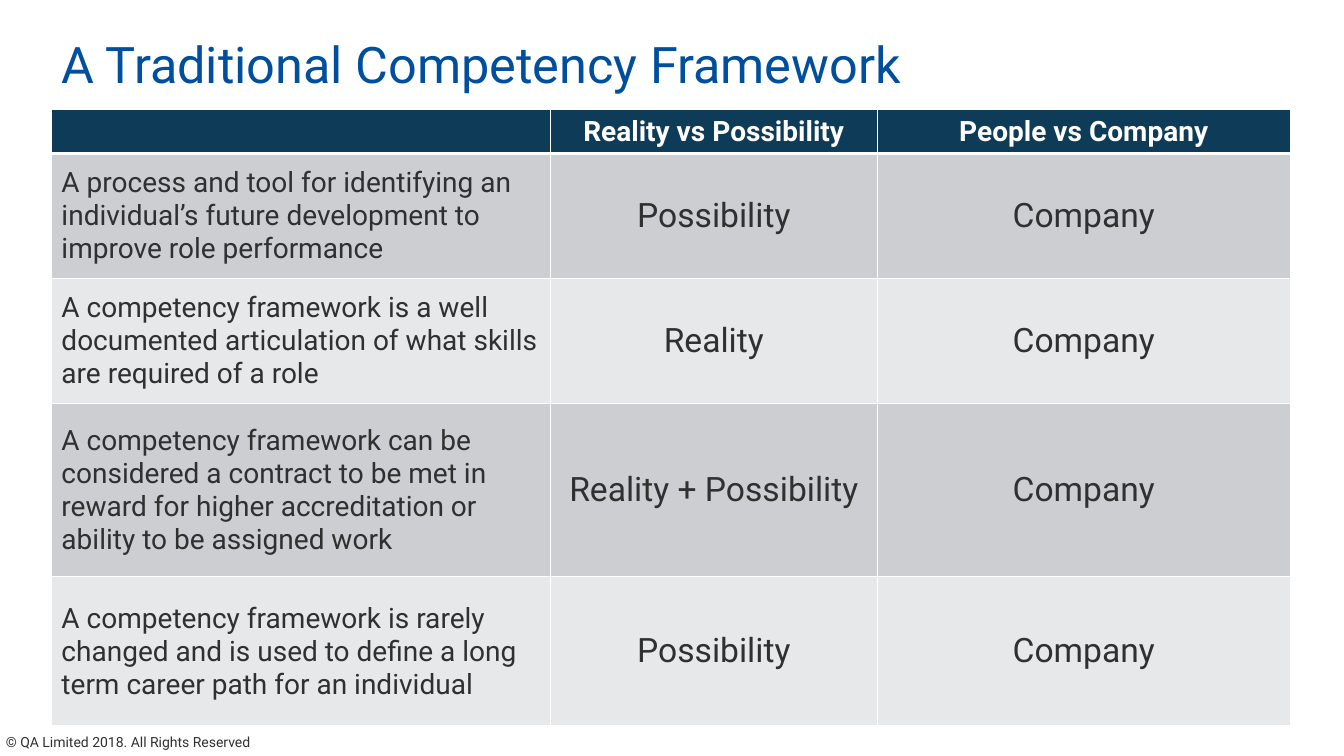
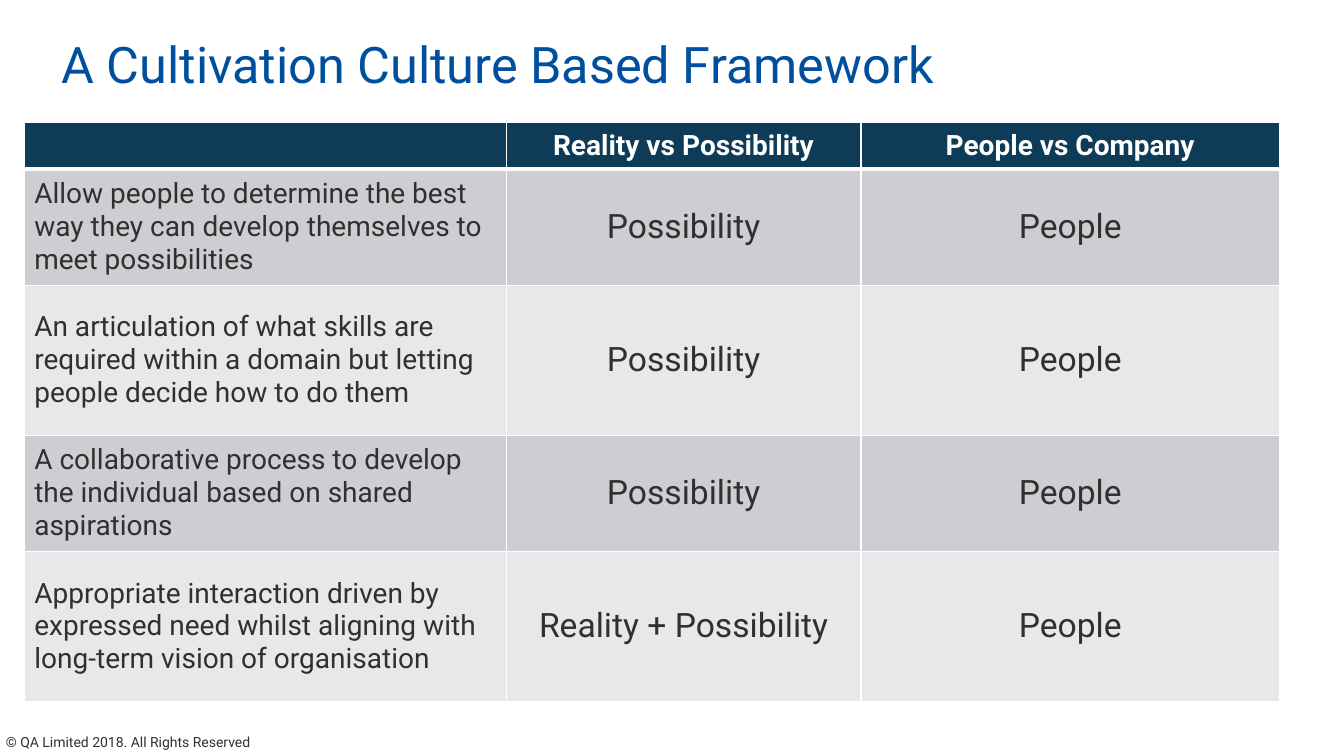
from lxml import etree
from pptx import Presentation
from pptx.dml.color import RGBColor
from pptx.enum.text import MSO_ANCHOR, PP_ALIGN
from pptx.oxml.ns import qn
from pptx.util import Inches, Pt

LEFT, CENTER = PP_ALIGN.LEFT, PP_ALIGN.CENTER
MIDDLE = MSO_ANCHOR.MIDDLE
TITLE_ONLY = 5

COLORS = {
    "title": "004F9F",
    "text": "303030",
    "header": "0E3C58",
    "dark_band": "CCCED1",
    "light_band": "E7E8EA",
    "white": "FFFFFF",
}
FONT = "Roboto"
TITLE_FORMAT = {"size": Pt(36), "bold": False}
FOOTER_FORMAT = {"size": Pt(10)}
HEADER_FORMAT = {"size": Pt(20), "bold": True}
STATEMENT_FORMAT = {"size": Pt(20), "bold": False}
VERDICT_FORMAT = {"size": Pt(24), "bold": False}

TITLE_BOX = (0.51, 0.33, 12.18, 0.68)
FOOTER_BOX = (-0.04, 7.23, 3.19, 0.27)
FOOTER = "© QA Limited 2018. All Rights Reserved"
HEADER = ("", "Reality vs Possibility", "People vs Company")

SLIDES = [
    {
        "title": "A Traditional Competency Framework",
        "origin": (0.51, 1.09),
        "columns": (4.95, 3.24, 4.1),
        "rows": (0.43, 1.24, 1.24, 1.72, 1.48),
        "focus": "Company",
        "statements": [
            ("A process and tool for identifying an individual’s future "
             "development to improve role performance", "Possibility"),
            ("A competency framework is a well documented articulation of "
             "what skills are required of a role", "Reality"),
            ("A competency framework can be considered a contract to be met "
             "in reward for higher accreditation or ability to be assigned "
             "work", "Reality + Possibility"),
            ("A competency framework is rarely changed and is used to define "
             "a long term career path for an individual", "Possibility"),
        ],
    },
    {
        "title": "A Cultivation Culture Based Framework",
        "origin": (0.24, 1.21),
        "columns": (4.78, 3.52, 4.15),
        "rows": (0.47, 1.15, 1.49, 1.15, 1.49),
        "focus": "People",
        "statements": [
            ("Allow people to determine the best way they can develop "
             "themselves to meet possibilities", "Possibility"),
            ("An articulation of what skills are required within a domain but "
             "letting people decide how to do them", "Possibility"),
            ("A collaborative process to develop the individual based on "
             "shared aspirations", "Possibility"),
            ("Appropriate interaction driven by expressed need whilst "
             "aligning with long-term vision of organisation",
             "Reality + Possibility"),
        ],
    },
]


def rgb(name):
    return RGBColor.from_string(COLORS[name])


def inches(values):
    return [Inches(value) for value in values]


def write(text_frame, text, color, text_format, alignment=LEFT):
    paragraph = text_frame.paragraphs[0]
    paragraph.text = text
    paragraph.alignment = alignment
    paragraph.font.name = FONT
    paragraph.font.color.rgb = rgb(color)
    for attribute, value in text_format.items():
        setattr(paragraph.font, attribute, value)
    return paragraph


def add_borders(cell, top, bottom):
    """Draw white cell borders; top and bottom widths are in points."""
    properties = cell._tc.get_or_add_tcPr()
    for side, width in (("L", 1), ("R", 1), ("T", top), ("B", bottom)):
        line = etree.SubElement(properties, qn(f"a:ln{side}"), w=str(Pt(width)))
        fill = etree.SubElement(line, qn("a:solidFill"))
        etree.SubElement(fill, qn("a:srgbClr"), val=COLORS["white"])


def cell_style(row, column):
    """Return the band colour, text colour and text format of a cell."""
    if row == 0:
        return "header", "white", HEADER_FORMAT
    band = "dark_band" if row % 2 else "light_band"
    return band, "text", VERDICT_FORMAT if column else STATEMENT_FORMAT


def add_comparison(slide, content):
    rows = [HEADER] + [(statement, verdict, content["focus"])
                       for statement, verdict in content["statements"]]
    widths, heights = inches(content["columns"]), inches(content["rows"])
    table = slide.shapes.add_table(
        len(rows), len(widths), *inches(content["origin"]),
        sum(widths), sum(heights)).table
    for column, width in zip(table.columns, widths):
        column.width = width
    for table_row, height in zip(table.rows, heights):
        table_row.height = height

    for row, texts in enumerate(rows):
        for column, text in enumerate(texts):
            cell = table.cell(row, column)
            band, color, text_format = cell_style(row, column)
            add_borders(cell, top=3 if row == 1 else 1,
                        bottom=3 if row == 0 else 1)
            cell.fill.solid()
            cell.fill.fore_color.rgb = rgb(band)
            cell.vertical_anchor = MIDDLE
            write(cell.text_frame, text, color, text_format,
                  CENTER if column else LEFT)


def add_slide(presentation, content):
    slide = presentation.slides.add_slide(presentation.slide_layouts[TITLE_ONLY])
    footer = slide.shapes.add_textbox(*inches(FOOTER_BOX))
    footer.text_frame.word_wrap = True
    write(footer.text_frame, FOOTER, "text", FOOTER_FORMAT)

    title = slide.shapes.title
    title.left, title.top, title.width, title.height = inches(TITLE_BOX)
    title.text_frame.vertical_anchor = MIDDLE
    paragraph = write(title.text_frame, content["title"], "title", TITLE_FORMAT)
    paragraph.line_spacing = 0.9
    add_comparison(slide, content)


def main():
    presentation = Presentation()
    presentation.slide_width, presentation.slide_height = inches((13.33, 7.5))
    for content in SLIDES:
        add_slide(presentation, content)
    presentation.save("out.pptx")


if __name__ == "__main__":
    main()
